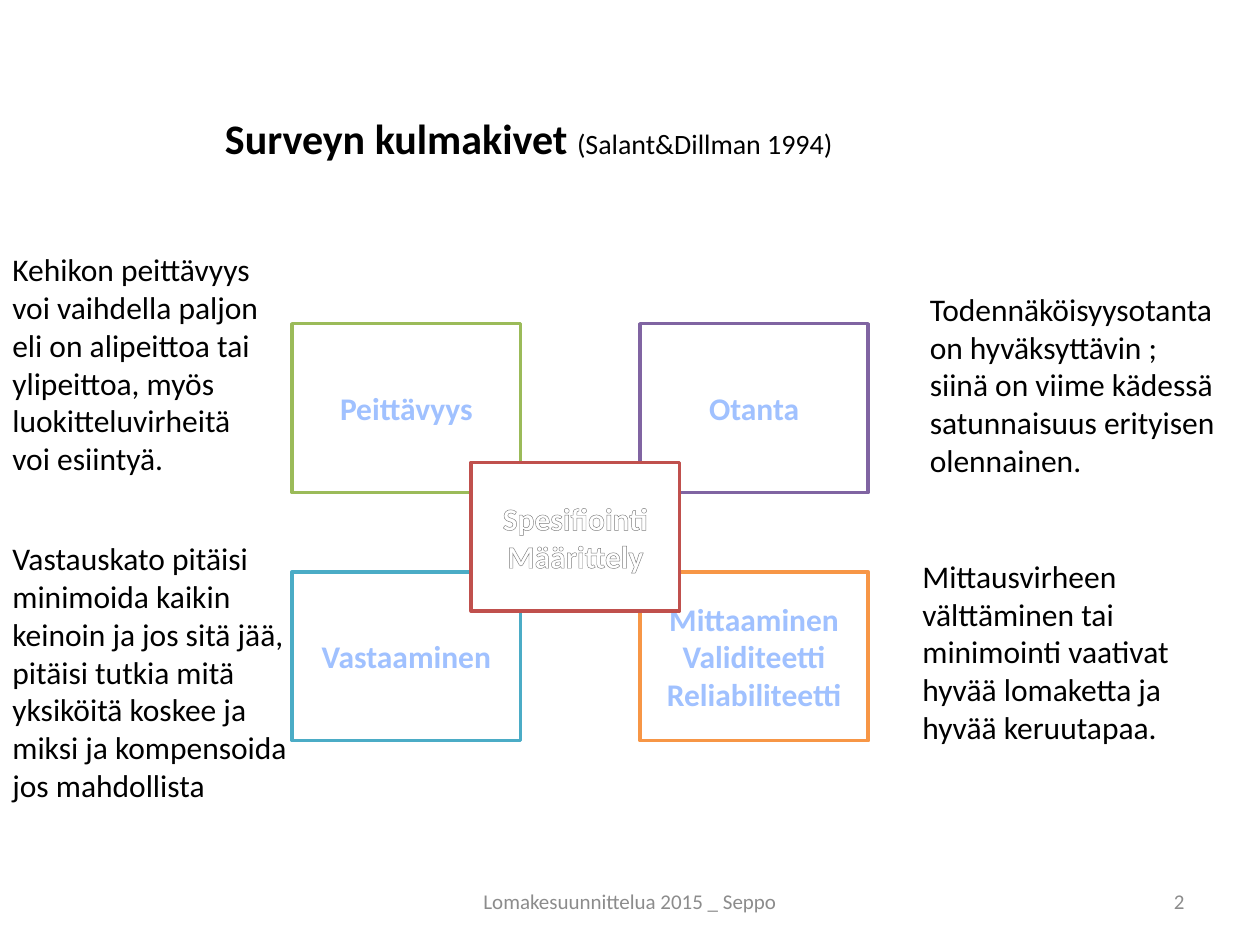
from lxml import etree
from pptx import Presentation
from pptx.dml.color import RGBColor
from pptx.enum import shapes, text
from pptx.oxml.ns import nsdecls
from pptx.util import Pt

COLORS = {
    "black": "000000", "white": "FFFFFF", "grey": "8C8C8C",
    "green": "9BBB59", "purple": "8064A2", "teal": "4BACC6",
    "orange": "F79646", "red": "C0504D",
    "pale": "BFD3F9", "sky": "A0C1FF", "navy": "003D85", "blue": "467AB8",
    "mid": "7F7F7F", "edge": "7D7D7D",
}
BLUE_GLOSS = (("pale", "sky", "navy", "sky", "pale"), "blue")
WHITE_GLOSS = (("white", "white", "mid", "white", "white"), "edge")
STOPS = (0, 9, 50, 79, 100)
LEFT, CENTER, RIGHT = text.PP_ALIGN.LEFT, text.PP_ALIGN.CENTER, text.PP_ALIGN.RIGHT


def rgb(name):
    """Return the named colour."""
    return RGBColor.from_string(COLORS[name])


def add_gloss(span, gloss):
    """Give a run a gradient fill and a thin outline."""
    fills, edge = gloss
    stops = "".join(
        f'<a:gs pos="{stop * 1000}"><a:srgbClr val="{COLORS[fill]}"/></a:gs>'
        for stop, fill in zip(STOPS, fills))
    parts = etree.fromstring(
        f'<a:rPr {nsdecls("a")}><a:ln w="10541"><a:solidFill>'
        f'<a:srgbClr val="{COLORS[edge]}"/></a:solidFill></a:ln>'
        f'<a:gradFill><a:gsLst>{stops}</a:gsLst>'
        '<a:lin ang="5400000" scaled="0"/></a:gradFill></a:rPr>')
    properties = span._r.get_or_add_rPr()
    for index, part in enumerate(list(parts)):
        properties.insert(index, part)


def add_span(para, words, size=18, color="black", bold=False, gloss=None):
    """Add a formatted run to a paragraph."""
    span = para.add_run()
    span.text = words
    span.font.name = "Calibri"
    span.font.size = Pt(size)
    span.font.bold = bold
    if gloss:
        add_gloss(span, gloss)
    else:
        span.font.color.rgb = rgb(color)


class Page:
    """Hold the slide being built and its style."""

    def __init__(self, deck):
        self.shapes = deck.slides.add_slide(deck.slide_layouts[6]).shapes

    def label(self, place, *spans, align=LEFT, middle=False, wrap=True):
        """Add a text box with one paragraph of (words, format) spans."""
        frame = self.shapes.add_textbox(*map(Pt, place)).text_frame
        frame.word_wrap = wrap
        if middle:
            frame.vertical_anchor = text.MSO_ANCHOR.MIDDLE
        else:
            frame.auto_size = text.MSO_AUTO_SIZE.SHAPE_TO_FIT_TEXT
        para = frame.paragraphs[0]
        para.alignment = align
        for words, style in spans:
            add_span(para, words, **style)

    def box(self, place, lines, color, gloss=BLUE_GLOSS,
            kind=shapes.MSO_SHAPE.RECTANGLE):
        """Add an outlined box with centred bold lines."""
        box = self.shapes.add_shape(kind, *map(Pt, place))
        box.shadow.inherit = False
        box.fill.solid()
        box.fill.fore_color.rgb = rgb("white")
        box.line.color.rgb = rgb(color)
        box.line.width = Pt(2)
        frame = box.text_frame
        frame.vertical_anchor = text.MSO_ANCHOR.MIDDLE
        for index, words in enumerate(lines):
            para = frame.add_paragraph() if index else frame.paragraphs[0]
            para.alignment = CENTER
            add_span(para, words, bold=True, gloss=gloss)


def main():
    """Build the slide about the cornerstones of a survey."""
    deck = Presentation()
    deck.slide_width, deck.slide_height = Pt(720), Pt(540)
    page = Page(deck)

    footer = dict(size=12, color="grey")
    page.label((246, 500.5, 228, 28.75), ("Lomakesuunnittelua 2015 _ Seppo", footer),
               align=CENTER, middle=True)
    page.label((516, 500.5, 168, 28.75), ("2", footer), align=RIGHT, middle=True)
    page.label((121.5, 60.5, 365, 36),
               ("Surveyn kulmakivet ", dict(size=24, bold=True)),
               ("(Salant&Dillman 1994)", dict(size=16)), wrap=False)

    cornerstones = (
        (["Peittävyys"], "green"), (["Otanta"], "purple"),
        (["Vastaaminen"], "teal"),
        (["Mittaaminen", "Validiteetti", "Reliabiliteetti"], "orange"),
    )
    for index, (lines, color) in enumerate(cornerstones):
        row, column = divmod(index, 2)
        page.box((167 + 198.7 * column, 185 + 141.8 * row, 130.5, 96.5), lines, color)
    page.box((269.3, 264.2, 119, 85), ["Spesifiointi", "Määrittely"], "red",
             WHITE_GLOSS, shapes.MSO_SHAPE.FLOWCHART_PROCESS)

    notes = (
        ((520, 314.6, 181.5, 116.6),
         "Mittausvirheen välttäminen tai minimointi vaativat hyvää lomaketta "
         "ja hyvää keruutapaa."),
        ((524.2, 162, 181.5, 116.6),
         "Todennäköisyysotanta on hyväksyttävin ; siinä on viime kädessä "
         "satunnaisuus erityisen olennainen."),
        ((0, 304.6, 181.5, 159.8),
         "Vastauskato pitäisi minimoida kaikin keinoin ja jos sitä jää, pitäisi "
         "tutkia mitä yksiköitä koskee ja miksi ja kompensoida jos mahdollista"),
        ((0, 139.4, 161.3, 138.2),
         "Kehikon peittävyys voi vaihdella paljon eli on alipeittoa tai "
         "ylipeittoa, myös luokitteluvirheitä voi esiintyä."),
    )
    for place, words in notes:
        page.label(place, (words, {}))
    deck.save("out.pptx")


if __name__ == "__main__":
    main()
